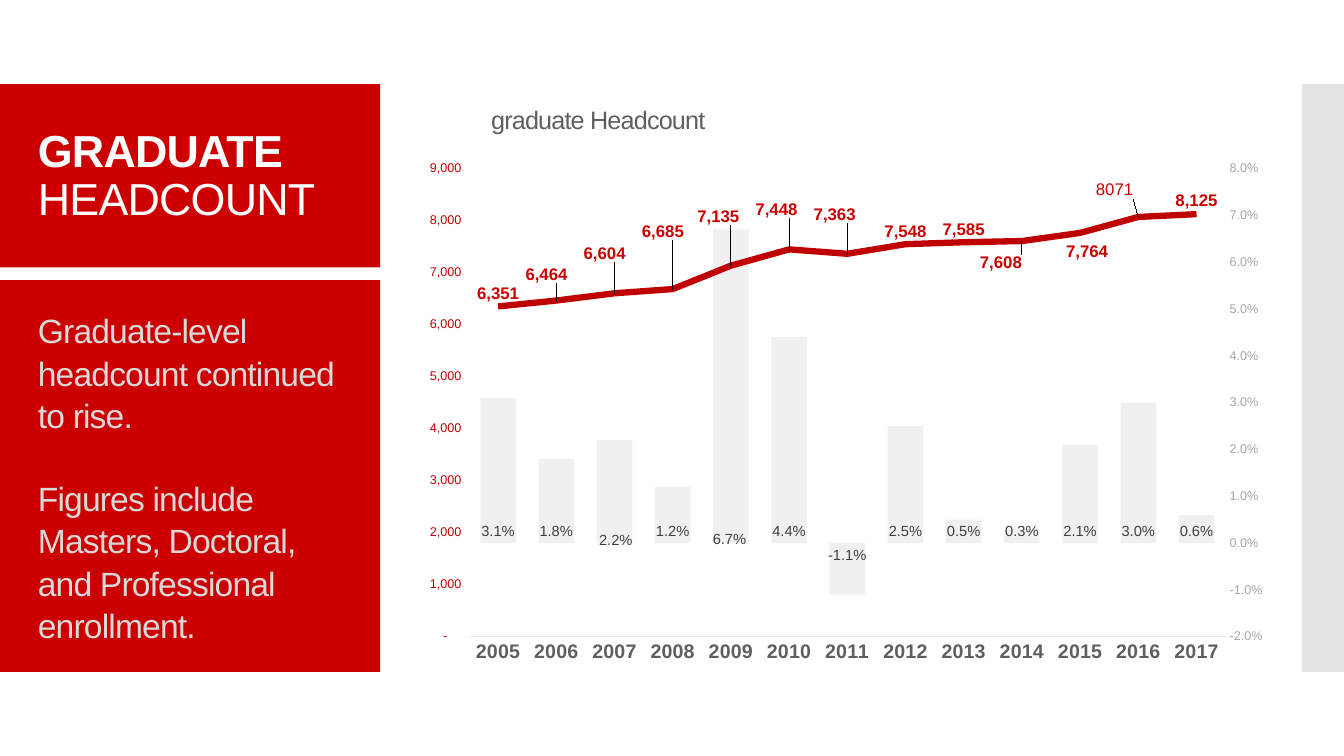
from copy import deepcopy
from dataclasses import dataclass

from lxml import etree
from pptx import Presentation
from pptx import util as u
from pptx.chart import axis as ax
from pptx.chart import data as cd
from pptx.dml import color as dc
from pptx.enum import chart as ec
from pptx.enum import shapes, text
from pptx.oxml import ns
from pptx.oxml import xmlchemy as xc


@dataclass
class Theme:
    face: str = "Arial"
    red: str = "CC0000"
    line: str = "C00000"
    white: str = "FFFFFF"
    soft: str = "D9D9D9"
    side: str = "C8C8C8"
    bar: str = "7F7F7F"
    dark: str = "404040"
    gray: str = "5F5F5F"
    pale: str = "A6A6A6"
    rule: str = "E7E7E7"
    head: float = 32
    body: float = 24
    title: float = 18
    year: float = 14
    count: float = 12
    rate: float = 10.5
    tick: float = 9


T = Theme()
rgb = dc.RGBColor.from_string


def write(par, words, size, color, bold=False, track=-60):
    """Add a run; track is letter spacing in hundredths of a point."""
    run = par.add_run()
    run.text = words
    font = run.font
    font.name, font.size, font.bold = T.face, u.Pt(size), bold
    font.color.rgb = rgb(color)
    run._r.get_or_add_rPr().set("spc", str(track))


def place(host, index, **vals):
    """Give a chart part a manual layout as its child at index."""
    for old in host.findall(ns.qn("c:layout")):
        host.remove(old)
    lay = xc.OxmlElement("c:layout")
    man = etree.SubElement(lay, ns.qn("c:manualLayout"))
    for key, val in vals.items():
        etree.SubElement(man, ns.qn("c:" + key)).set("val", str(val))
    host.insert(index, lay)


prs = Presentation()
prs.slide_width, prs.slide_height = u.Pt(960), u.Pt(540)
slide = prs.slides.add_slide(prs.slide_layouts[6])

# Panels
fade = []
for *area, color in [
    (0, 60, 271.5, 420, T.red),
    (930, 60, 30, 420, T.side),
    (0, 191, 278, 9, T.white),
]:
    panel = slide.shapes.add_shape(shapes.MSO_SHAPE.RECTANGLE, *map(u.Pt, area))
    panel.shadow.inherit = False
    panel.fill.solid()
    panel.fill.fore_color.rgb = rgb(color)
    panel.line.fill.background()
    if color == T.side:
        fade.append((panel._element, 50))

# Heading and body
frames = []
for area in [(20, 62, 250.5, 129), (20, 200, 232, 281)]:
    frame = slide.shapes.add_textbox(*map(u.Pt, area)).text_frame
    frame.word_wrap = True
    frame.vertical_anchor = text.MSO_ANCHOR.MIDDLE
    frames.append(frame)
head, body = frames
par = head.paragraphs[0]
par.line_spacing = 0.9
write(par, "GRADUATE", T.head, T.white, bold=True)
write(par, " HEADCOUNT", T.head, T.white)
for i, words in enumerate([
    "Graduate-level headcount continued to rise.",
    "Figures include Masters, Doctoral, and Professional enrollment.",
]):
    par = body.add_paragraph() if i else body.paragraphs[0]
    par.line_spacing = 1.05
    if i:
        par.space_before = u.Pt(29)
    write(par, words, T.body, T.soft)

# Chart data
wide, high = 628.5, 418
data = cd.CategoryChartData()
data.categories = [str(year) for year in range(2005, 2018)]
data.add_series("Series 1", [0.031, 0.018, 0.022, 0.012, 0.067, 0.044, -0.011,
                             0.025, 0.005, 0.003, 0.021, 0.03, 0.006], "0.0%")
data.add_series("Series 2", [6351, 6464, 6604, 6685, 7135, 7448, 7363,
                             7548, 7585, 7608, 7764, 8071, 8125], "#,##0")
chart = slide.shapes.add_chart(
    ec.XL_CHART_TYPE.COLUMN_CLUSTERED,
    *map(u.Pt, (291, 62, wide, high)), data).chart
chart.has_legend = False
chart.font.name, chart.font.size = T.face, u.Pt(10)
chart.font.color.rgb = rgb(T.bar)
chart.has_title = True
write(chart.chart_title.text_frame.paragraphs[0], "graduate Headcount",
      T.title, T.gray)
place(chart.chart_title._element, 1, xMode="edge", yMode="edge", x=0.09, y=0.02)

# Headcount moves to a line on its own pair of axes
plot = chart.plots[0]
plot.gap_width, plot.overlap, plot.vary_by_categories = 64, -27, False
bars = plot._element
area = bars.getparent()
ser = bars.findall(ns.qn("c:ser"))[1]
for flag in ser.findall(ns.qn("c:invertIfNegative")):
    ser.remove(flag)
lines = xc.OxmlElement("c:lineChart")
etree.SubElement(lines, ns.qn("c:grouping")).set("val", "standard")
etree.SubElement(lines, ns.qn("c:varyColors")).set("val", "0")
lines.append(ser)
etree.SubElement(lines, ns.qn("c:marker")).set("val", "1")
cat, val = chart.category_axis._element, chart.value_axis._element
cat2, val2 = deepcopy(cat), deepcopy(val)
val.addnext(cat2)
cat2.addnext(val2)
for el, own, other in [(cat2, "50010", "50020"), (val2, "50020", "50010")]:
    el.find(ns.qn("c:axId")).set("val", own)
    el.find(ns.qn("c:crossAx")).set("val", other)
    el.find(ns.qn("c:crosses")).set("val", "min")
    etree.SubElement(lines, ns.qn("c:axId")).set("val", own)
val.find(ns.qn("c:crosses")).set("val", "max")
bars.addnext(lines)
place(area, 0, layoutTarget="inner", xMode="edge", yMode="edge",
      x=0.07, y=0.14, w=0.86, h=0.8)

# Axes
fonts = []
chart.category_axis.visible = False
years = ax.CategoryAxis(cat2)
years.major_tick_mark = ec.XL_TICK_MARK.NONE
years.format.line.color.rgb = rgb(T.rule)
fonts.append((years.tick_labels.font, T.year, T.gray, True))
for el, low, top, step, form, color in [
    (val, -0.02, 0.08, 0.01, "0.0%", T.pale),
    (val2, 0, 9000, 1000, '#,##0_);(#,##0);"-"??_)', T.line),
]:
    scale = ax.ValueAxis(el)
    scale.has_major_gridlines = False
    scale.minimum_scale, scale.maximum_scale, scale.major_unit = low, top, step
    scale.major_tick_mark = ec.XL_TICK_MARK.NONE
    scale.format.line.fill.background()
    scale.tick_labels.number_format = form
    scale.tick_labels.number_format_is_linked = False
    fonts.append((scale.tick_labels.font, T.tick, color, False))

# Series and labels; shifts are in points from the usual label place
rate, count = [p.series[0] for p in chart.plots]
rate.format.fill.solid()
rate.format.fill.fore_color.rgb = rgb(T.bar)
rate.invert_if_negative = False
fade.append((rate._element, 11))
count.format.line.color.rgb = rgb(T.line)
count.format.line.width = u.Pt(4.5)
count.marker.style = ec.XL_MARKER_STYLE.NONE
count.smooth = False
spot = ec.XL_LABEL_POSITION
for series, pos, form, size, color, bold, shifts in [
    (rate, spot.INSIDE_BASE, "0.0%", T.rate, T.dark, False,
     {2: (1, 7), 4: (-1, 6)}),
    (count, spot.ABOVE, "#,##0", T.count, T.red, True,
     {1: (-7, -9), 2: (-7, -19), 3: (-7, -32), 4: (-9, -26), 5: (-9, -19),
      6: (-9, -19), 9: (-15, 25), 10: (5, 23), 11: (-17, -10)}),
]:
    tags = series.data_labels
    tags.show_value, tags.position = True, pos
    tags.number_format, tags.number_format_is_linked = form, False
    fonts.append((tags.font, size, color, bold))
    for i, (dx, dy) in shifts.items():
        tag = series.points[i].data_label
        tag.position = pos
        plain = series is count and i == 11
        fonts.append((tag.font, size, color, bold and not plain))
        el = tags._element.xpath(f"c:dLbl[c:idx/@val={i}]")[0]
        place(el, 1, x=round(dx / wide, 4), y=round(dy / high, 4))
        num = xc.OxmlElement("c:numFmt")
        num.set("formatCode", "0" if plain else form)
        num.set("sourceLinked", "0")
        el.insert(2, num)

for font, size, color, bold in fonts:
    font.name, font.size, font.bold = T.face, u.Pt(size), bold
    font.color.rgb = rgb(color)
for el, share in fade:
    tint = el.xpath("./*/a:solidFill/a:srgbClr")[0]
    etree.SubElement(tint, ns.qn("a:alpha")).set("val", str(share * 1000))

prs.save("out.pptx")
